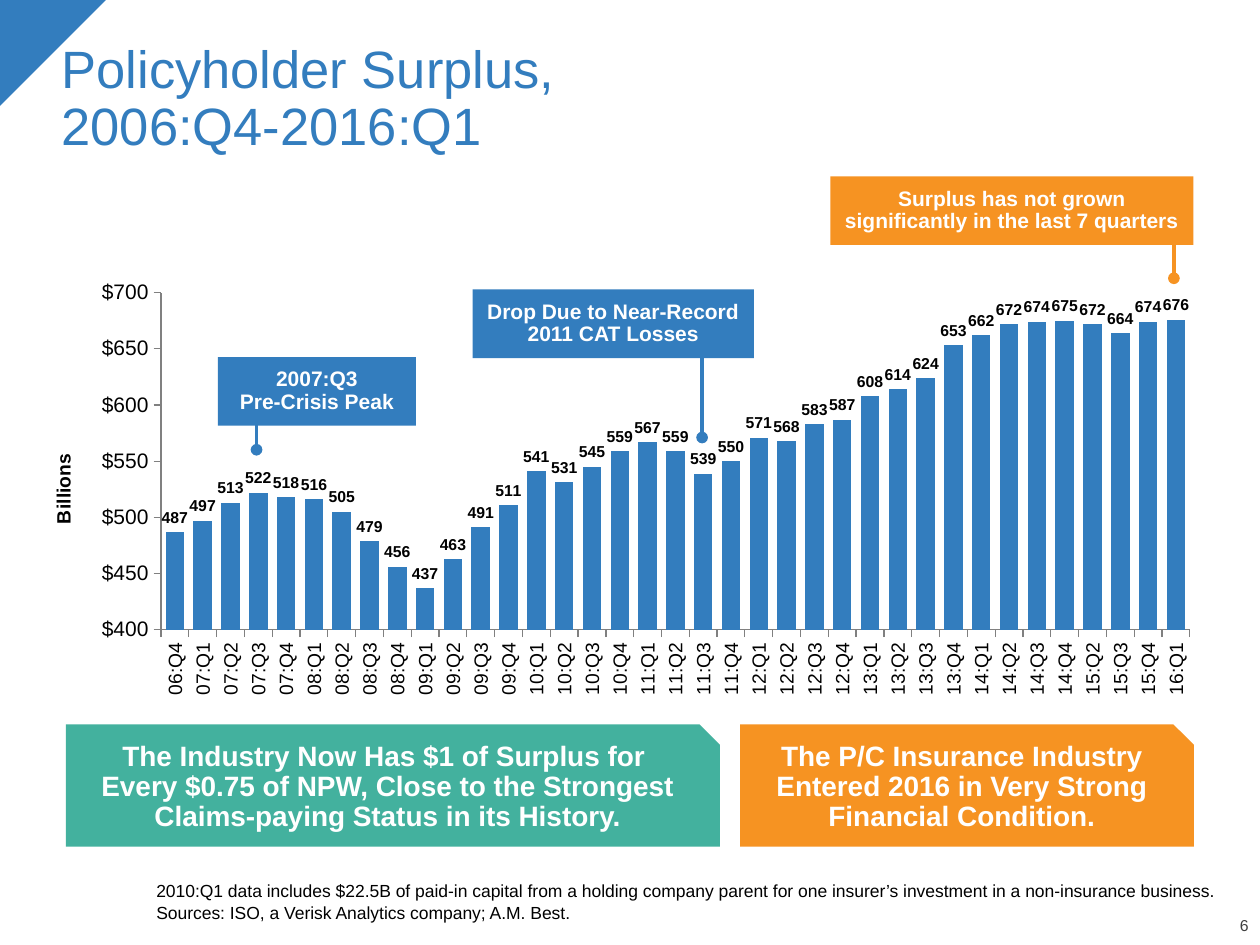
from copy import deepcopy
from dataclasses import dataclass

from lxml.etree import SubElement
from pptx import Presentation
from pptx.chart.data import CategoryChartData
from pptx.dml.color import RGBColor
from pptx.enum.chart import XL_CHART_TYPE, XL_LABEL_POSITION, XL_TICK_MARK
from pptx.enum.shapes import MSO_CONNECTOR, MSO_SHAPE
from pptx.enum.text import MSO_ANCHOR, PP_ALIGN
from pptx.oxml import parse_xml
from pptx.oxml.ns import nsdecls, qn
from pptx.util import Pt


@dataclass(frozen=True)
class Theme:
    font: str = "Arial"
    blue: str = "337DBE"
    orange: str = "F69322"
    teal: str = "43B19E"
    white: str = "FFFFFF"
    black: str = "000000"
    gray: str = "404040"
    axis: str = "808080"
    title: int = 30
    banner: int = 16
    callout: int = 12
    value_axis: int = 12
    cat_axis: int = 11
    note: int = 10
    label: int = 9


@dataclass(frozen=True)
class Box:
    x: float
    y: float
    w: float
    h: float

    def emu(self):
        return Pt(self.x), Pt(self.y), Pt(self.w), Pt(self.h)


@dataclass(frozen=True)
class Callout:
    text: str
    box: Box
    color: str
    pin_x: float
    pin_y: float


@dataclass(frozen=True)
class Banner:
    text: str
    box: Box
    color: str


T = Theme()

CALLOUTS = [
    Callout("Surplus has not grown\vsignificantly in the last 7 quarters",
            Box(474.5, 100.8, 207.5, 39.2), T.orange, 670.8, 159),
    Callout("2007:Q3\vPre-Crisis Peak",
            Box(124.5, 204, 113.2, 39.2), T.blue, 146.6, 257),
    Callout("Drop Due to Near-Record\v2011 CAT Losses",
            Box(270, 165.4, 160.8, 39.2), T.blue, 401.2, 250),
]

BANNERS = [
    Banner("The P/C Insurance Industry Entered 2016 in Very Strong Financial Condition.",
           Box(423, 414, 259.2, 69.8), T.orange),
    Banner("The Industry Now Has $1 of Surplus for \vEvery $0.75 of NPW, "
           "Close to the Strongest Claims-paying Status in its History.",
           Box(37.6, 414, 373.8, 69.8), T.teal),
]

NOTES = [
    "2010:Q1 data includes $22.5B of paid-in capital from a holding company parent "
    "for one insurer’s investment in a non-insurance business.",
    "Sources: ISO, a Verisk Analytics company; A.M. Best.",
]

SURPLUS = [487, 497, 513, 522, 518, 516, 505, 479, 456, 437, 463, 491, 511,
           541, 531, 545, 559, 567, 559, 539, 550, 571, 568, 583, 587, 608,
           614, 624, 653, 662, 672, 674, 675, 672, 664, 674, 676]
QUARTERS = [f"{n // 4:02}:Q{n % 4 + 1}" for n in range(6 * 4 + 3, 16 * 4 + 1)]
QUARTERS.remove("15:Q1")


def rgb(color: str) -> RGBColor:
    return RGBColor.from_string(color)


def set_font(font, size: float, color: str = T.black, bold: bool = False) -> None:
    font.name = T.font
    font.size = Pt(size)
    font.bold = bold
    font.color.rgb = rgb(color)


def write(tf, *lines: str, size: float, color: str = T.black, bold: bool = False,
          align=PP_ALIGN.LEFT, anchor=MSO_ANCHOR.MIDDLE,
          insets=(7.2, 3.6, 7.2, 3.6), gap: float = 0) -> None:
    tf.word_wrap = True
    tf.vertical_anchor = anchor
    tf.margin_left, tf.margin_top, tf.margin_right, tf.margin_bottom = map(Pt, insets)
    for i, line in enumerate(lines):
        p = tf.add_paragraph() if i else tf.paragraphs[0]
        p.text = line
        p.alignment = align
        p.line_spacing = 0.9
        p.space_before = Pt(gap if i else 0)
        for r in p.runs:
            set_font(r.font, size, color, bold)
        for br in p._p.findall(qn("a:br")):
            br.insert(0, deepcopy(p.runs[0]._r.rPr))


def add_filled(shapes, kind, box: Box, color: str):
    sp = shapes.add_shape(kind, *box.emu())
    sp.shadow.inherit = False
    sp.fill.solid()
    sp.fill.fore_color.rgb = rgb(color)
    sp.line.fill.background()
    return sp


def add_callout(s, c: Callout) -> None:
    shapes = s.shapes.add_group_shape().shapes
    start = c.box.y + c.box.h / 2
    pin = shapes.add_connector(MSO_CONNECTOR.STRAIGHT, Pt(c.pin_x), Pt(start),
                               Pt(c.pin_x), Pt(c.pin_y))
    pin.line.color.rgb = rgb(c.color)
    pin.line.width = Pt(2.25)
    SubElement(pin.line._get_or_add_ln(), qn("a:tailEnd"), type="oval")
    SubElement(pin._element.spPr, qn("a:effectLst"))
    sp = add_filled(shapes, MSO_SHAPE.RECTANGLE, c.box, c.color)
    write(sp.text_frame, c.text, size=T.callout, color=T.white, bold=True,
          align=PP_ALIGN.CENTER)


def add_banner(s, b: Banner) -> None:
    sp = add_filled(s.shapes, MSO_SHAPE.SNIP_1_RECTANGLE, b.box, b.color)
    write(sp.text_frame, b.text, size=T.banner, color=T.white, bold=True,
          align=PP_ALIGN.CENTER, insets=(7.2, 3.6, 7.2, 7.2))


def add_text(s, box: Box, *lines: str, **fmt) -> None:
    tb = s.shapes.add_textbox(*box.emu())
    write(tb.text_frame, *lines, anchor=MSO_ANCHOR.BOTTOM, insets=(0, 0, 0, 0), **fmt)


def set_plot_area(chart, **parts: float) -> None:
    area = chart._chartSpace.chart.plotArea
    for old in area.findall(qn("c:layout")):
        area.remove(old)
    modes = '<c:xMode val="edge"/><c:yMode val="edge"/>'
    sizes = "".join(f'<c:{k} val="{v}"/>' for k, v in parts.items())
    area.insert(0, parse_xml(
        f'<c:layout {nsdecls("c")}><c:manualLayout><c:layoutTarget val="inner"/>'
        f"{modes}{sizes}</c:manualLayout></c:layout>"))


def add_surplus_chart(s, box: Box) -> None:
    data = CategoryChartData(number_format="#,##0")
    data.categories = QUARTERS
    data.add_series("Series 1", SURPLUS)
    chart = s.shapes.add_chart(XL_CHART_TYPE.COLUMN_CLUSTERED, *box.emu(), data).chart
    chart.has_legend = False
    chart.has_title = False
    set_font(chart.font, 18)
    set_plot_area(chart, x=0.098, y=0.141, w=0.881, h=0.648)

    plot = chart.plots[0]
    plot.gap_width = 50
    plot.vary_by_categories = False
    fill = plot.series[0].format.fill
    fill.solid()
    fill.fore_color.rgb = rgb(T.blue)
    plot.has_data_labels = True
    labels = plot.data_labels
    labels.show_value = True
    labels.position = XL_LABEL_POSITION.OUTSIDE_END
    labels.number_format = "#,##0"
    labels.number_format_is_linked = False
    set_font(labels.font, T.label, bold=True)

    cat, val = chart.category_axis, chart.value_axis
    for axis, size in ((cat, T.cat_axis), (val, T.value_axis)):
        axis.has_major_gridlines = False
        axis.major_tick_mark = XL_TICK_MARK.OUTSIDE
        axis.minor_tick_mark = XL_TICK_MARK.NONE
        axis.format.line.color.rgb = rgb(T.axis)
        axis.format.line.width = Pt(0.75)
        set_font(axis.tick_labels.font, size)
    cat._element.txPr.bodyPr.set("rot", "-5400000")
    cat._element.txPr.bodyPr.set("vert", "horz")
    val.minimum_scale, val.maximum_scale, val.major_unit = 400, 700, 50
    val.tick_labels.number_format = '"$"#,##0'
    val.tick_labels.number_format_is_linked = False
    val.has_title = True
    p = val.axis_title.text_frame.paragraphs[0]
    r = p.add_run()
    r.text = "Billions"
    set_font(r.font, T.cat_axis, bold=True)


def main() -> None:
    prs = Presentation()
    prs.slide_width, prs.slide_height = Pt(720), Pt(540)
    s = prs.slides.add_slide(prs.slide_layouts[5])

    corner = add_filled(s.shapes, MSO_SHAPE.RIGHT_TRIANGLE, Box(0, 0, 60.5, 60.5), T.blue)
    corner.rotation = 90

    title = s.shapes.title
    title.left, title.top, title.width, title.height = Box(28, 18, 666, 75).emu()
    write(title.text_frame, "Policyholder Surplus, \v2006:Q4-2016:Q1", size=T.title,
          color=T.blue, anchor=MSO_ANCHOR.BOTTOM)
    s.shapes._spTree.append(title._element)

    add_text(s, Box(679, 525, 34.5, 9.5), "6", size=T.label, color=T.gray,
             align=PP_ALIGN.RIGHT)
    add_text(s, Box(89.3, 495.4, 611.3, 32.4), *NOTES, size=T.note, gap=2)
    add_surplus_chart(s, Box(26.6, 125.3, 667.4, 297.4))
    for c in CALLOUTS:
        add_callout(s, c)
    for b in BANNERS:
        add_banner(s, b)
    prs.save("out.pptx")


if __name__ == "__main__":
    main()
